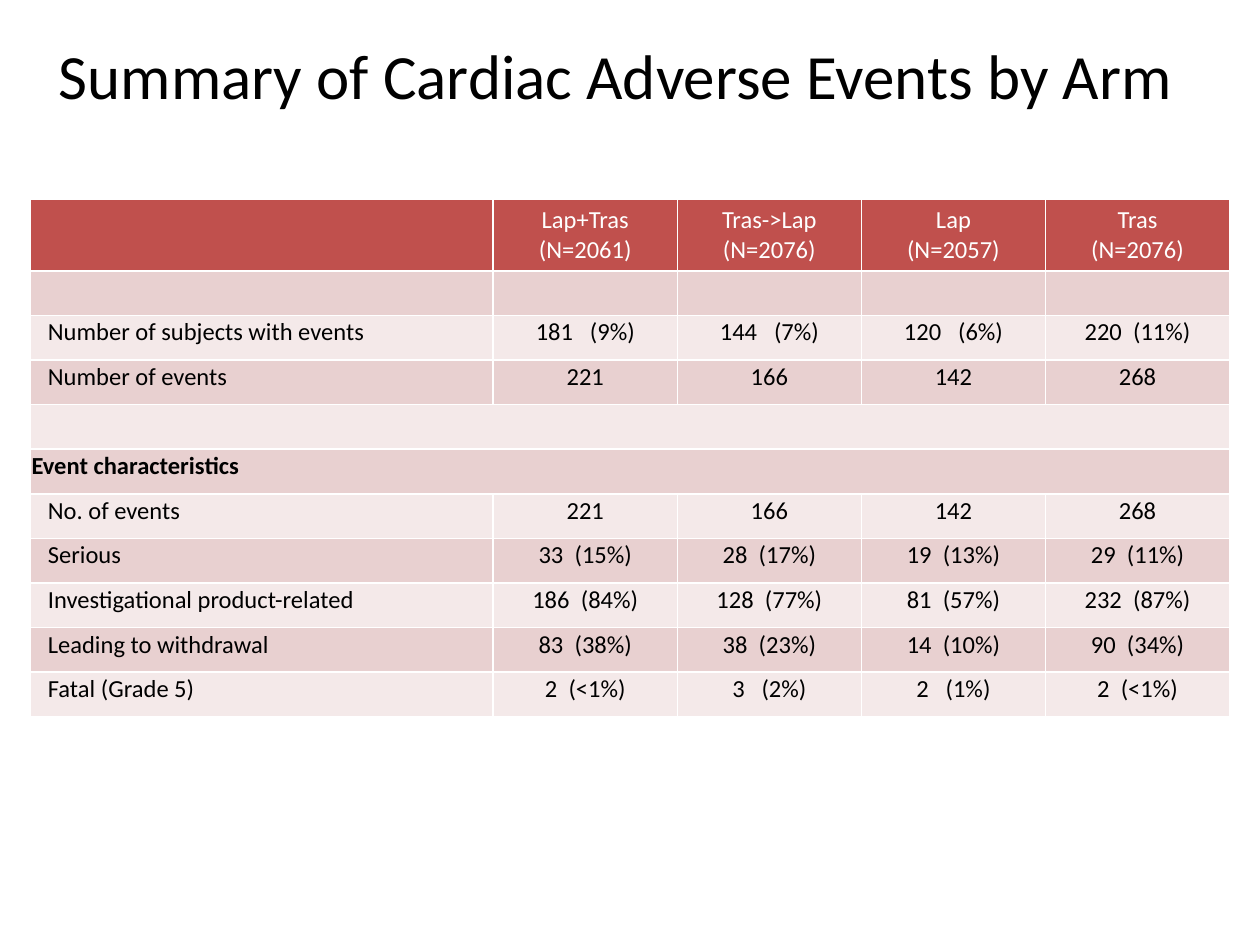
from pptx import Presentation, util as u
from pptx.dml.color import RGBColor
from pptx.enum import text

COLORS = {"header": "C0504D", "dark": "E8D0D0", "light": "F4E9E9",
          "ink": "000000", "paper": "FFFFFF"}
FONT = "Calibri"
TITLE_BOX = (0.28, 0.21, 9.21, 0.88)
TABLE_BOX = (0.24, 1.58, 9.52, 4.11)
HEADER_HEIGHT = 0.57
COLUMN_SHARES = [0.386] + [0.1535] * 4
SPACE_WIDTH = 3.2

ARMS = [("Lap+Tras", "(N=2061)"), ("Tras->Lap", "(N=2076)"),
        ("Lap", "(N=2057)"), ("Tras", "(N=2076)")]
SECTION = "Event\u00a0characteristics"
ROWS = [
    ("", [""] * 4),
    ("Number of subjects with events", ["181 (9%)", "144 (7%)", "120 (6%)", "220 (11%)"]),
    ("Number of events", ["221", "166", "142", "268"]),
    ("", []),
    (SECTION, []),
    ("No. of events", ["221", "166", "142", "268"]),
    ("Serious", ["33 (15%)", "28 (17%)", "19 (13%)", "29 (11%)"]),
    ("Investigational product-related", ["186 (84%)", "128 (77%)", "81 (57%)", "232 (87%)"]),
    ("Leading to withdrawal", ["83 (38%)", "38 (23%)", "14 (10%)", "90 (34%)"]),
    ("Fatal (Grade 5)", ["2 (<1%)", "3 (2%)", "2 (1%)", "2 (<1%)"]),
]


def add_span(para, words, size, color="ink", bold=False):
    span = para.add_run()
    span.text = words
    span.font.name = FONT
    span.font.size = u.Pt(size)
    span.font.bold = bold
    span.font.color.rgb = RGBColor.from_string(COLORS[color])
    return span


def fill_cell(cell, color):
    cell.fill.solid()
    cell.fill.fore_color.rgb = RGBColor.from_string(COLORS[color])


def style_body(cell):
    cell.margin_left = cell.margin_right = u.Inches(0.01)
    cell.margin_top = cell.margin_bottom = 0
    para = cell.text_frame.paragraphs[0]
    para.line_spacing = 1.07
    para.space_before = para.space_after = u.Pt(1)
    return para


def write_label(cell, label):
    para = style_body(cell)
    if label and label != SECTION:
        para._p.get_or_add_pPr().set("marL", str(u.Inches(0.13)))
    if label:
        add_span(para, label, 14, bold=label == SECTION)


def write_value(cell, value):
    para = style_body(cell)
    para.alignment = text.PP_ALIGN.CENTER
    count, _, share = value.partition(" ")
    if count:
        add_span(para, count, 14)
    if share:
        gap = add_span(para, " ", 14)
        extra_spaces = 2 if len(share) < 5 else 1
        gap.font._element.set("spc", str(round(extra_spaces * SPACE_WIDTH * 100)))
        add_span(para, share, 14)


def write_arm(cell, lines):
    frame = cell.text_frame
    for index, line in enumerate(lines):
        para = frame.add_paragraph() if index else frame.paragraphs[0]
        para.alignment = text.PP_ALIGN.CENTER
        add_span(para, line, 14, "paper")


def add_title(page, box):
    frame = page.shapes.add_textbox(*map(u.Inches, box)).text_frame
    frame.word_wrap = True
    frame.margin_top = u.Inches(0.08)
    para = frame.paragraphs[0]
    para.alignment = text.PP_ALIGN.CENTER
    add_span(para, "Summary of Cardiac Adverse Events by Arm", 36)


def add_events_table(page, box):
    _, _, width, height = box
    table = page.shapes.add_table(len(ROWS) + 1, len(COLUMN_SHARES),
                                  *map(u.Inches, box)).table
    for column, share in zip(table.columns, COLUMN_SHARES):
        column.width = u.Inches(width * share)
    for index, row in enumerate(table.rows):
        body_height = (height - HEADER_HEIGHT) / len(ROWS)
        row.height = u.Inches(body_height if index else HEADER_HEIGHT)
        color = ("light", "dark")[index % 2] if index else "header"
        for cell in row.cells:
            fill_cell(cell, color)
    for column, arm in enumerate(ARMS, 1):
        write_arm(table.cell(0, column), arm)
    for index, (label, values) in enumerate(ROWS, 1):
        write_label(table.cell(index, 0), label)
        for column, value in enumerate(values, 1):
            write_value(table.cell(index, column), value)
        if not values:
            table.cell(index, 0).merge(table.cell(index, len(ARMS)))


def main():
    deck = Presentation()
    deck.slide_width, deck.slide_height = u.Inches(10), u.Inches(7.5)
    page = deck.slides.add_slide(deck.slide_layouts[6])
    add_title(page, TITLE_BOX)
    add_events_table(page, TABLE_BOX)
    deck.save("out.pptx")


if __name__ == "__main__":
    main()
